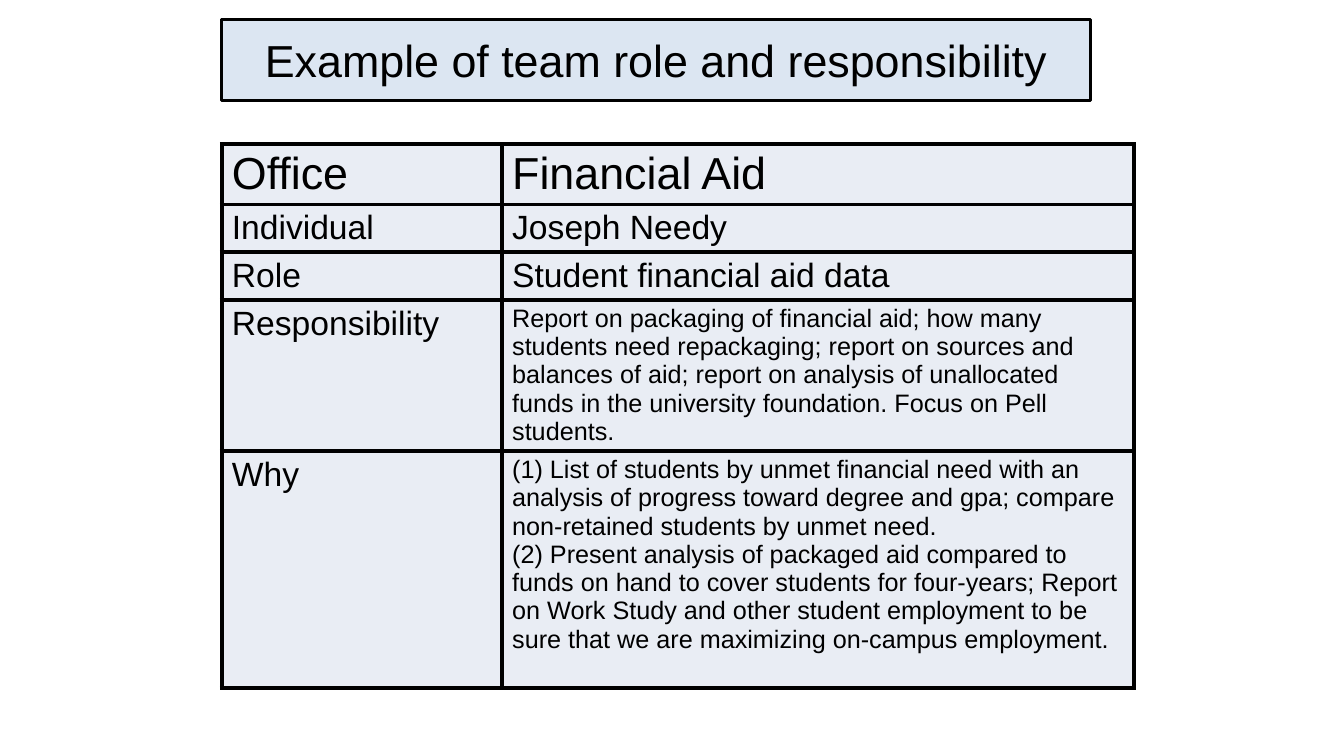
from dataclasses import dataclass
from lxml.etree import SubElement as Sub
from pptx import Presentation
from pptx.dml.color import RGBColor as Rgb
from pptx.enum.shapes import MSO_SHAPE as Shape
from pptx.enum.text import MSO_ANCHOR as Anchor, PP_ALIGN as Align
from pptx.oxml.ns import qn
from pptx.util import Inches, Pt


@dataclass(frozen=True)
class Theme:
    font: str = "Arial"
    ink: Rgb = Rgb(0, 0, 0)
    title: Rgb = Rgb(0xDC, 0xE6, 0xF2)
    cell: Rgb = Rgb(0xE9, 0xED, 0xF4)
    big: int = 32
    mid: int = 24
    small: int = 18
    edge: int = 2
    grid: int = 3


THEME = Theme()
WIDTHS = (2.78, 6.27)
HEIGHTS = (0.59, 0.47, 0.47, 1.5, 2.35)
ROWS = (
    ("Office", "Financial Aid", THEME.big, THEME.big),
    ("Individual", "Joseph Needy", THEME.mid, THEME.mid),
    ("Role", "Student financial aid data", THEME.mid, THEME.mid),
    ("Responsibility",
     "Report on packaging of financial aid; how many students need "
     "repackaging; report on sources and balances of aid; report on analysis "
     "of unallocated funds in the university foundation. Focus on Pell students.",
     THEME.mid, THEME.small),
    ("Why",
     "(1) List of students by unmet financial need with an analysis of progress "
     "toward degree and gpa; compare non-retained students by unmet need.\n"
     "(2) Present analysis of packaged aid compared to funds on hand to cover "
     "students for four-years; Report on Work Study and other student employment "
     "to be sure that we are maximizing on-campus employment.",
     THEME.mid, THEME.small),
)


def style(item, form):
    for name, value in form.items():
        setattr(item, name, value)


def write(frame, text, size, align=Align.LEFT):
    frame.text = text
    frame.word_wrap = True
    for para in frame.paragraphs:
        para.alignment = align
        for run in para.runs:
            style(run.font, {"name": THEME.font, "size": Pt(size)})
            run.font.color.rgb = THEME.ink


def paint(item, color):
    item.fill.solid()
    item.fill.fore_color.rgb = color


def border(cell):
    props = cell._tc.get_or_add_tcPr()
    for spot, side in enumerate(("lnL", "lnR", "lnT", "lnB")):
        line = Sub(props, qn(f"a:{side}"), w=str(Pt(THEME.grid)))
        fill = Sub(line, qn("a:solidFill"))
        Sub(fill, qn("a:srgbClr"), val=str(THEME.ink))
        props.insert(spot, line)


def add_title(slide, left, top, width, height):
    box = slide.shapes.add_shape(
        Shape.RECTANGLE, *map(Inches, (left, top, width, height)))
    box.shadow.inherit = False
    paint(box, THEME.title)
    box.line.color.rgb = THEME.ink
    box.line.width = Pt(THEME.edge)
    box.text_frame.vertical_anchor = Anchor.MIDDLE
    write(box.text_frame, "Example of team role and responsibility",
          THEME.big, Align.CENTER)


def add_roles(slide, left, top, width, height):
    table = slide.shapes.add_table(
        len(ROWS), len(WIDTHS), *map(Inches, (left, top, width, height))).table
    style(table, {"first_row": False, "horz_banding": False})
    for col, share in zip(table.columns, WIDTHS):
        col.width = Inches(width * share / sum(WIDTHS))
    for row, share, (label, text, head, body) in zip(table.rows, HEIGHTS, ROWS):
        row.height = Inches(height * share / sum(HEIGHTS))
        for cell, words, size in zip(row.cells, (label, text), (head, body)):
            paint(cell, THEME.cell)
            border(cell)
            write(cell.text_frame, words, size)


def main():
    deck = Presentation()
    style(deck, {"slide_width": Inches(13.33), "slide_height": Inches(7.5)})
    slide = deck.slides.add_slide(deck.slide_layouts[6])
    add_title(slide, 2.2, 0.19, 8.62, 0.81)
    add_roles(slide, 2.2, 1.43, sum(WIDTHS), sum(HEIGHTS))
    deck.save("out.pptx")


if __name__ == "__main__":
    main()
